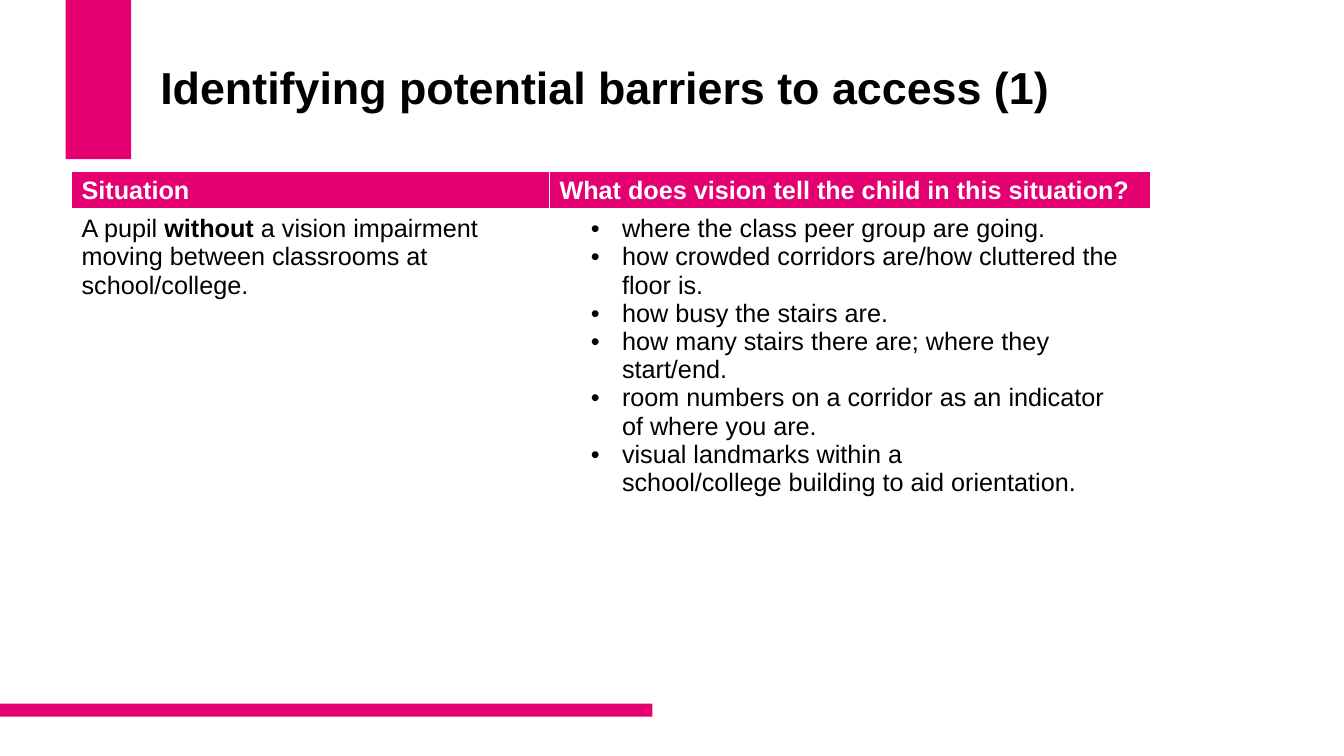
from lxml.etree import SubElement
from pptx import Presentation
from pptx.dml.color import RGBColor
from pptx.enum.shapes import MSO_SHAPE
from pptx.enum.text import MSO_ANCHOR, MSO_AUTO_SIZE, PP_ALIGN
from pptx.oxml.ns import qn
from pptx.util import Inches, Pt

PINK = RGBColor(0xE5, 0x00, 0x71)
BLACK = RGBColor(0, 0, 0)
WHITE = RGBColor(0xFF, 0xFF, 0xFF)
FONT = "Arial"

COLUMN_WIDTHS = (4.74, 5.96)
ROW_HEIGHTS = (0.36, 4.68)
HEADINGS = ("Situation", "What does vision tell the child in this situation?")
SITUATION = (
    ("A pupil ", False),
    ("without\u00a0", True),
    ("a vision impairment moving between classrooms at school/college.", False),
)
VISUAL_CLUES = (
    "where the class peer group are going.",
    "how crowded corridors are/how cluttered the floor is.",
    "how busy the stairs are.",
    "how many stairs there are; where they start/end.",
    "room numbers on a corridor as an indicator of\u00a0where you are.",
    "visual landmarks within a school/college\u00a0building to aid orientation.",
)


def write(paragraph, text, size=18, color=BLACK, bold=False):
    run = paragraph.add_run()
    run.text = text
    run.font.name = FONT
    run.font.size = Pt(size)
    run.font.bold = bold
    run.font.color.rgb = color


def add_bullet(paragraph):
    properties = paragraph._p.get_or_add_pPr()
    properties.set("marL", str(Inches(0.62)))
    properties.set("indent", str(Inches(-0.31)))
    SubElement(properties, qn("a:buFont"), typeface=FONT)
    SubElement(properties, qn("a:buChar"), char="•")


def add_borders(cell, bottom_width):
    """Draw white cell borders, placed ahead of the fill as the schema asks."""
    properties = cell._tc.get_or_add_tcPr()
    for position, side in enumerate("LRTB"):
        width = bottom_width if side == "B" else 1
        border = SubElement(properties, qn(f"a:ln{side}"), w=str(Pt(width)))
        fill = SubElement(border, qn("a:solidFill"))
        SubElement(fill, qn("a:srgbClr"), val=str(WHITE))
        properties.insert(position, border)


class BarrierSlide:
    def __init__(self, presentation):
        self.slide = presentation.slides.add_slide(presentation.slide_layouts[5])

    def bar(self, left, top, width, height):
        bar = self.slide.shapes.add_shape(
            MSO_SHAPE.RECTANGLE,
            Inches(left), Inches(top), Inches(width), Inches(height))
        bar.shadow.inherit = False
        bar.fill.solid()
        bar.fill.fore_color.rgb = PINK
        bar.line.fill.background()

    def title(self, text):
        title = self.slide.shapes.title
        title.left, title.top = Inches(1.49), Inches(0.4)
        title.width, title.height = Inches(9.6), Inches(1.45)
        frame = title.text_frame
        frame.word_wrap = True
        frame.auto_size = MSO_AUTO_SIZE.NONE
        frame.vertical_anchor = MSO_ANCHOR.MIDDLE
        frame.margin_bottom = Inches(0.51)
        heading = frame.paragraphs[0]
        heading.alignment = PP_ALIGN.LEFT
        heading.line_spacing = 0.9
        write(heading, text, size=32, bold=True)

    def table(self, left, top):
        table = self.slide.shapes.add_table(
            len(ROW_HEIGHTS), len(COLUMN_WIDTHS), Inches(left), Inches(top),
            Inches(sum(COLUMN_WIDTHS)), Inches(sum(ROW_HEIGHTS))).table
        table.horz_banding = False
        for column, width in zip(table.columns, COLUMN_WIDTHS):
            column.width = Inches(width)
        for row, height in zip(table.rows, ROW_HEIGHTS):
            row.height = Inches(height)

        for index, heading in enumerate(HEADINGS):
            cell = self.cell(table, 0, index, PINK, bottom_width=3)
            write(cell.text_frame.paragraphs[0], heading, color=WHITE, bold=True)

        situation = self.cell(table, 1, 0, WHITE).text_frame.paragraphs[0]
        for text, bold in SITUATION:
            write(situation, text, bold=bold)

        clues = self.cell(table, 1, 1, WHITE).text_frame
        for index, clue in enumerate(VISUAL_CLUES):
            paragraph = clues.add_paragraph() if index else clues.paragraphs[0]
            add_bullet(paragraph)
            write(paragraph, clue)

    def cell(self, table, row, column, color, bottom_width=1):
        cell = table.cell(row, column)
        cell.fill.solid()
        cell.fill.fore_color.rgb = color
        add_borders(cell, bottom_width)
        return cell


def main():
    presentation = Presentation()
    presentation.slide_width = Inches(13.33)
    presentation.slide_height = Inches(7.5)
    barriers = BarrierSlide(presentation)
    barriers.bar(0.65, 0, 0.65, 1.58)
    barriers.bar(0, 6.98, 6.47, 0.13)
    barriers.title("Identifying potential barriers to access (1)")
    barriers.table(0.71, 1.7)
    presentation.save("out.pptx")


if __name__ == "__main__":
    main()
